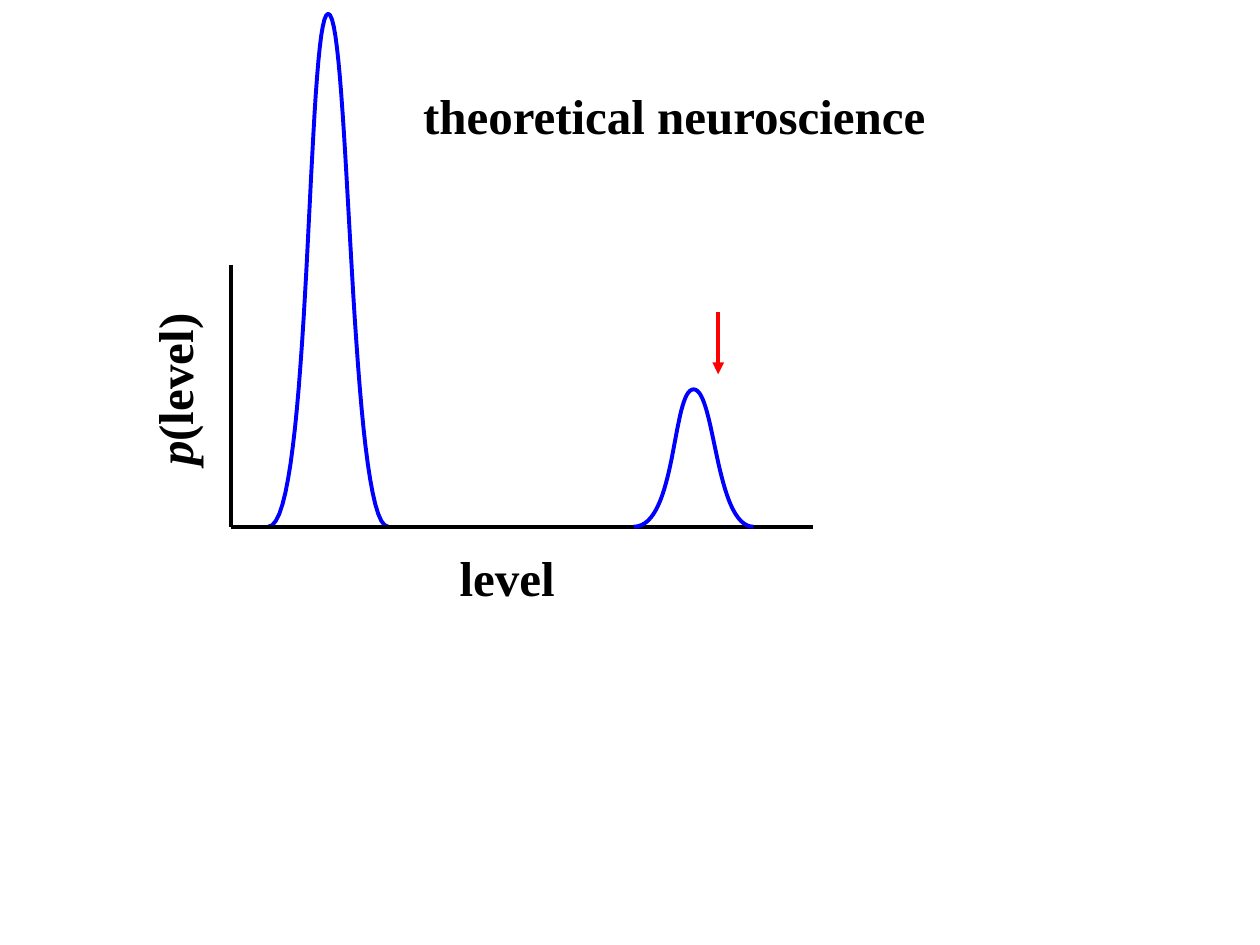
from dataclasses import dataclass

from pptx import Presentation
from pptx.dml.color import RGBColor as Rgb
from pptx.enum.shapes import MSO_CONNECTOR as Link
from pptx.enum.text import MSO_AUTO_SIZE as Fit
from pptx.oxml.ns import qn
from pptx.util import Inches, Pt
from lxml.etree import SubElement as Sub


@dataclass(frozen=True)
class Theme:
    ink: Rgb = Rgb(0, 0, 0)
    curve: Rgb = Rgb(0, 0, 255)
    mark: Rgb = Rgb(255, 0, 0)
    font: str = "Times New Roman"
    size: float = 28
    line: float = 2.25


THEME = Theme()
COLS, ROWS = 100, 75  # square grid cells
CELL = Inches(10) // COLS
STEPS = 32  # points on each half of a peak

# Each half of a peak: four Bezier points, as shares of the peak's box
HALVES = (
    ((1, 1), (0.68, 1), (0.68, 0), (0.5, 0)),
    ((0.5, 0), (0.32, 0), (0.36, 1), (0, 1)),
)


def grid(*vals):
    return [round(val * CELL) for val in vals]


def stroke(slide, ends, color, head=False):
    """A straight line, with an arrowhead at its end if asked."""
    link = slide.shapes.add_connector(Link.STRAIGHT, *grid(*ends))
    link.line.color.rgb = color
    link.line.width = Pt(THEME.line)
    props = link._element.spPr
    if head:
        Sub(props.find(qn("a:ln")), qn("a:tailEnd"), type="triangle")
    Sub(props, qn("a:effectLst"))


def bezier(ctrl, t):
    wts = ((1 - t) ** 3, 3 * t * (1 - t) ** 2, 3 * t * t * (1 - t), t ** 3)
    return [sum(w * pt[axis] for w, pt in zip(wts, ctrl)) for axis in (0, 1)]


def peak(slide, box):
    """A bell curve that fills the box."""
    left, top, wide, high = box
    dots = [bezier(half, n / STEPS) for half in HALVES for n in range(STEPS + 1)]
    dots = [grid(left + x * wide, top + y * high) for x, y in dots]
    path = slide.shapes.build_freeform(*dots[0])
    path.add_line_segments(dots[1:], close=False)
    bell = path.convert_to_shape()
    bell.shadow.inherit = False
    bell.fill.background()
    bell.line.color.rgb = THEME.curve
    bell.line.width = Pt(THEME.line)


def axes(slide, box):
    """Left and bottom edges of the box."""
    left, top, wide, high = box
    base = top + high
    stroke(slide, (left, top, left, base), THEME.ink)
    stroke(slide, (left, base, left + wide, base), THEME.ink)


def label(slide, box, runs, turn=0):
    """Bold text; each run is a (text, italic) pair."""
    note = slide.shapes.add_textbox(*grid(*box))
    note.rotation = turn
    frame = note.text_frame
    frame.word_wrap = False
    frame.auto_size = Fit.SHAPE_TO_FIT_TEXT
    for text, slant in runs:
        run = frame.paragraphs[0].add_run()
        run.text = text
        font = run.font
        font.name, font.size = THEME.font, Pt(THEME.size)
        font.bold, font.italic = True, slant
        font.color.rgb = THEME.ink


def arrow(slide, box):
    """A red arrow down the left edge of the box."""
    left, top, _, high = box
    stroke(slide, (left, top, left, top + high), THEME.mark, head=True)


def main():
    deck = Presentation()
    deck.slide_width, deck.slide_height = grid(COLS, ROWS)
    slide = deck.slides.add_slide(deck.slide_layouts[6])

    # Tall peak, axes and their names
    peak(slide, (21.3, 1.1, 9.5, 40.7))
    axes(slide, (18.3, 21, 46.2, 20.8))
    label(slide, (6.7, 28, 14.2, 5.7), [("p", True), ("(level)", False)], 270)
    label(slide, (35.5, 43, 9.6, 5.7), [("level", False)])

    # Low peak, title and pointer
    peak(slide, (50.3, 30.9, 9.5, 10.9))
    label(slide, (32.6, 6.3, 42.3, 5.7), [("theoretical neuroscience", False)])
    arrow(slide, (57, 24.8, 0, 4.9))

    deck.save("out.pptx")


if __name__ == "__main__":
    main()
